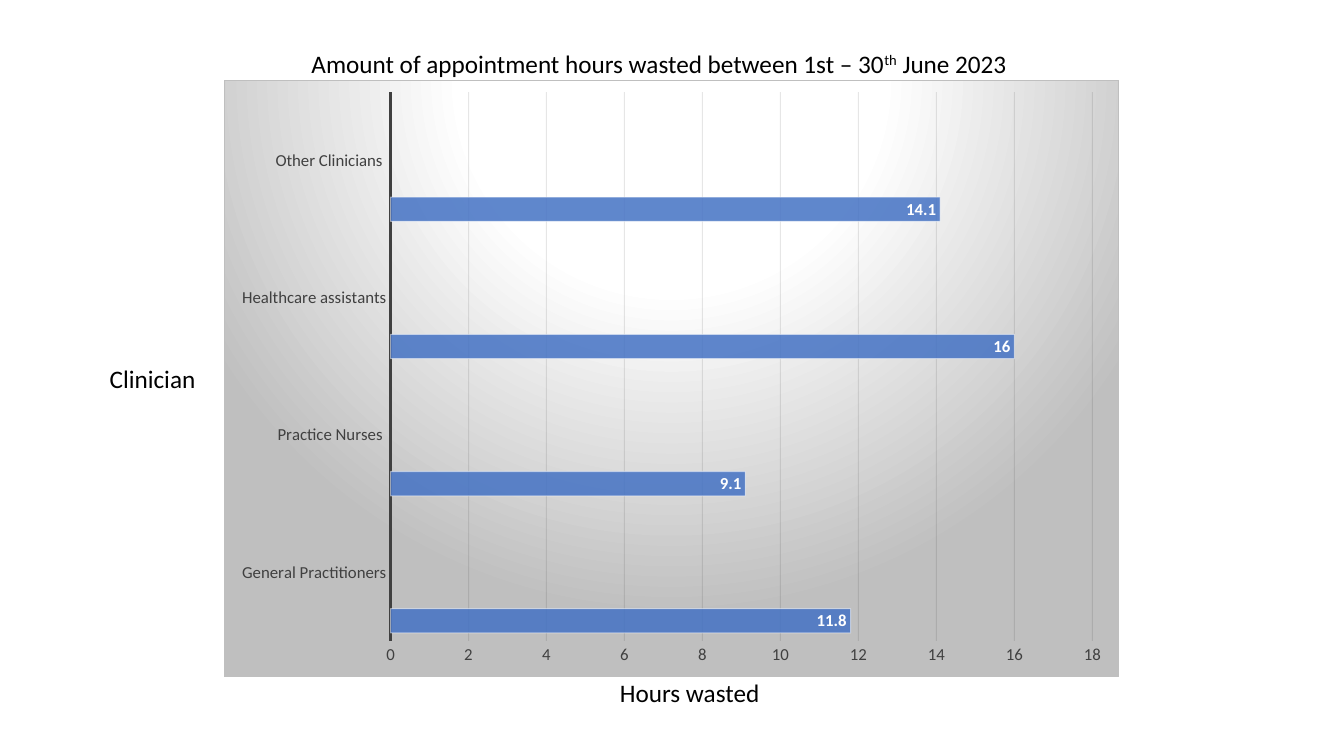
from lxml import etree
from pptx import Presentation
from pptx.chart.data import CategoryChartData
from pptx.dml.color import RGBColor
from pptx.enum.chart import XL_CHART_TYPE as CT, XL_LABEL_POSITION as LP, XL_TICK_MARK as TM
from pptx.enum.text import MSO_ANCHOR, PP_ALIGN
from pptx.oxml import parse_xml
from pptx.oxml.ns import nsdecls, qn
from pptx.util import Pt

PX = 9525
FONT = "Calibri"
COLORS = {
    "text": "000000", "axis": "404040", "grid": "0D0D0D",
    "white": "FFFFFF", "gray": "BFBFBF",
}
SERIES_COLORS = ["4472C4", "ED7D31", "A5A5A5", "FFC000", "5B9BD5"]


def style_font(font, size, color, bold=False):
    values = {"name": FONT, "size": Pt(size), "bold": bold}
    for key, value in values.items():
        setattr(font, key, value)
    font.color.rgb = RGBColor.from_string(color)


def set_alphas(element, percents):
    for clr, percent in zip(element.iter(qn("a:srgbClr")), percents):
        etree.SubElement(clr, qn("a:alpha"), val=str(percent * 1000))


prs = Presentation()
prs.slide_width, prs.slide_height = 1280 * PX, 720 * PX
s = prs.slides.add_slide(prs.slide_layouts[5])

data = CategoryChartData()
data.categories = ["General Practitioners", "Practice Nurses ",
                   "Healthcare assistants", "Other Clinicians "]
data.add_series("Series 1", [11.8, 9.1, 16, 14.1])
for n in range(2, 6):
    data.add_series(f"Series {n}", [None] * 4)

box = [v * PX for v in (213, 76, 853, 569)]
chart = s.shapes.add_chart(CT.BAR_CLUSTERED, *box, data).chart
chart.has_legend = chart.has_title = False
style_font(chart.font, 10, COLORS["text"])

stops = "".join(
    f'<a:gs pos="{pos * 1000}"><a:srgbClr val="{COLORS[name]}"/></a:gs>'
    for pos, name in [(0, "white"), (39, "white"), (100, "gray")])
background = parse_xml(
    f'<c:spPr {nsdecls("c", "a")}><a:gradFill><a:gsLst>{stops}</a:gsLst>'
    '<a:path path="circle">'
    '<a:fillToRect l="50000" t="-80000" r="50000" b="180000"/></a:path></a:gradFill>'
    f'<a:ln w="9525"><a:solidFill><a:srgbClr val="{COLORS["gray"]}"/></a:solidFill></a:ln>'
    '</c:spPr>')
chart.element.find(qn("c:chart")).addnext(background)

plot = chart.plots[0]
for key, value in {"gap_width": 65, "overlap": 0, "vary_by_categories": False}.items():
    setattr(plot, key, value)

for series, color in zip(plot.series, SERIES_COLORS):
    fmt = series.format
    fmt.fill.solid()
    fmt.fill.fore_color.rgb = RGBColor.from_string(color)
    fmt.line.width = Pt(0.75)
    fmt.line.color.rgb = RGBColor.from_string(COLORS["white"])
    set_alphas(fmt.element if hasattr(fmt, "element") else series._element, [85, 50])
    labels = series.data_labels
    labels.show_value = True
    labels.position = LP.INSIDE_END
    style_font(labels.font, 12, COLORS["white"], True)

cat_axis, val_axis = chart.category_axis, chart.value_axis
for axis in (cat_axis, val_axis):
    axis.major_tick_mark = axis.minor_tick_mark = TM.NONE
    style_font(axis.tick_labels.font, 12, COLORS["axis"])
cat_axis.has_major_gridlines = False
cat_axis.format.line.width = Pt(1.5)
cat_axis.format.line.color.rgb = RGBColor.from_string(COLORS["axis"])
val_axis.format.line.fill.background()
val_axis.has_major_gridlines = True
grid = val_axis.major_gridlines.format.line
grid.width = Pt(0.75)
grid.color.rgb = RGBColor.from_string(COLORS["grid"])
set_alphas(chart.element.find(".//" + qn("c:majorGridlines")), [10])
for key, value in {"minimum_scale": 0, "maximum_scale": 18, "major_unit": 2}.items():
    setattr(val_axis, key, value)

title = s.shapes.title
for key, value in {"left": 287, "top": 41, "width": 780, "height": 97}.items():
    setattr(title, key, value * PX)
hours = s.shapes.add_textbox(581 * PX, 640 * PX, 171 * PX, 38 * PX)
clinician = s.shapes.add_textbox(95 * PX, 341 * PX, 128 * PX, 38 * PX)
texts = [
    (title, ["Amount of appointment hours wasted between 1st – 30", "th", " June 2023"]),
    (hours, ["Hours wasted"]),
    (clinician, ["Clinician"]),
]
for sp, runs in texts:
    tf = sp.text_frame
    tf.word_wrap = True
    tf.vertical_anchor = MSO_ANCHOR.TOP
    p = tf.paragraphs[0]
    p.alignment = PP_ALIGN.LEFT
    p.line_spacing = 1.0
    for text in runs:
        r = p.add_run()
        r.text = text
        style_font(r.font, 18, COLORS["text"])
        if text == "th":
            r.font._element.set("baseline", "30000")

prs.save("out.pptx")
